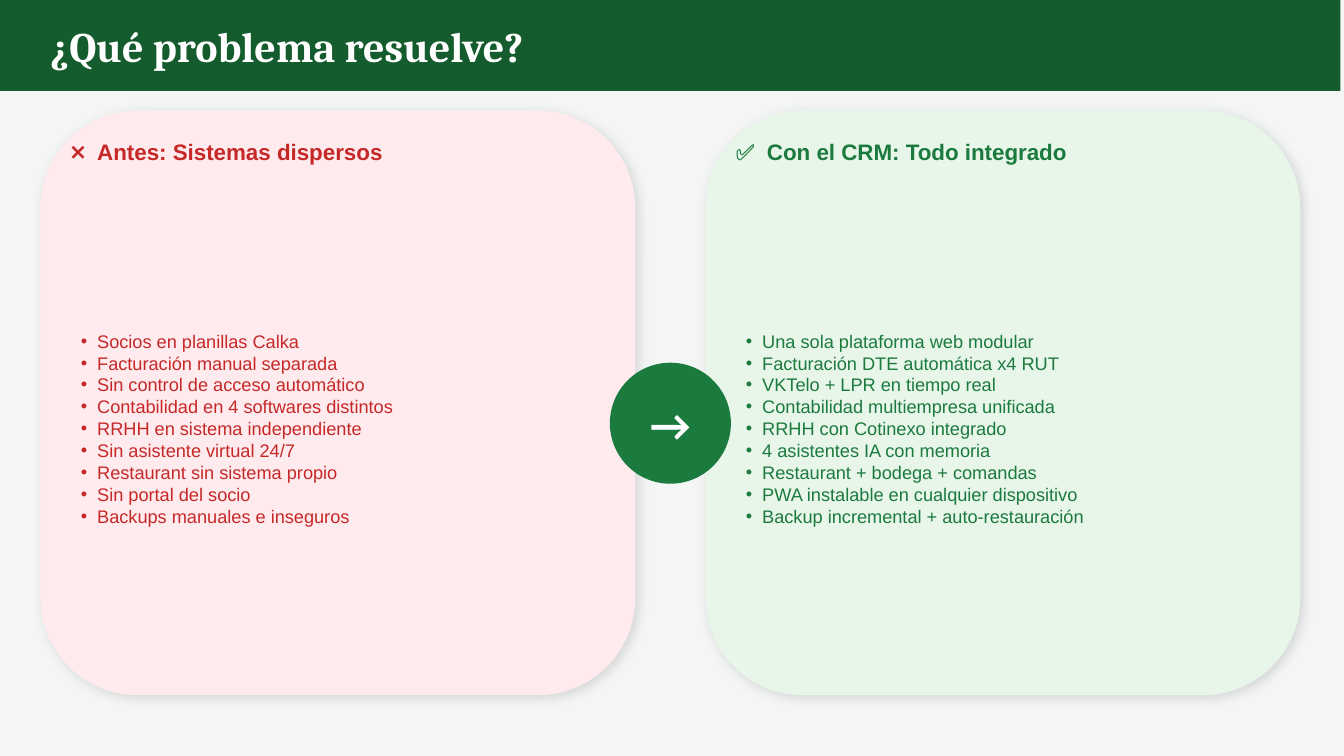
from lxml.etree import SubElement
from pptx import Presentation
from pptx.dml.color import RGBColor
from pptx.enum.shapes import MSO_SHAPE
from pptx.enum.text import MSO_ANCHOR, PP_ALIGN
from pptx.oxml import parse_xml
from pptx.oxml.ns import nsdecls, qn
from pptx.util import Cm, Pt

SHADOW = (
    f'<a:effectLst {nsdecls("a")}>'
    f'<a:outerShdw blurRad="{Pt(8)}" dist="{Pt(3)}" dir="2700000" algn="bl" rotWithShape="0">'
    '<a:srgbClr val="000000"><a:alpha val="13000"/></a:srgbClr>'
    '</a:outerShdw></a:effectLst>'
)


def add_block(page, preset, place, color, shadow=False):
    """Add a borderless filled shape; place is left, top, width, height in cm."""
    block = page.shapes.add_shape(preset, *map(Cm, place))
    block.fill.solid()
    block.fill.fore_color.rgb = RGBColor.from_string(color)
    block.line.fill.background()
    block.shadow.inherit = False
    if shadow:
        properties = block.element.spPr
        properties.replace(properties.find(qn("a:effectLst")), parse_xml(SHADOW))


def add_text(page, text, place, color, size, font="Arial", bold=False,
             align=PP_ALIGN.LEFT, margin=0, hanging=0, bullet=None):
    """Add a text box with one paragraph per line; margin and hanging in cm."""
    frame = page.shapes.add_textbox(*map(Cm, place)).text_frame
    frame.word_wrap = True
    frame.vertical_anchor = MSO_ANCHOR.MIDDLE
    for index, line in enumerate(text.split("\n")):
        para = frame.add_paragraph() if index else frame.paragraphs[0]
        para.alignment = align
        if margin:
            layout = para._p.get_or_add_pPr()
            layout.set("marL", str(Cm(margin)))
            layout.set("indent", str(-Cm(hanging)))
            if bullet:
                SubElement(layout, qn("a:buFont")).set("typeface", font)
                SubElement(layout, qn("a:buChar")).set("char", bullet)
        span = para.add_run()
        span.text = line
        span.font.name = font
        span.font.size = Pt(size)
        span.font.bold = bold
        span.font.color.rgb = RGBColor.from_string(color)


# Page
deck = Presentation()
deck.slide_width, deck.slide_height = Cm(33.87), Cm(19.05)
page = deck.slides.add_slide(deck.slide_layouts[6])
page.background.fill.solid()
page.background.fill.fore_color.rgb = RGBColor.from_string("F4F6F5")

# Title band
add_block(page, MSO_SHAPE.RECTANGLE, (0, 0, 33.78, 2.29), "145C2E")
add_text(page, "¿Qué problema resuelve?", (1.02, 0, 31.75, 2.29), "FFFFFF", 30,
         font="Cambria", bold=True)

# Comparison cards: left, fill, text colour, heading, heading hang, items
cards = [
    (1.02, "FFEBEE", "C62828", "❌\tAntes: Sistemas dispersos", 0.67, [
        "Socios en planillas Calka",
        "Facturación manual separada",
        "Sin control de acceso automático",
        "Contabilidad en 4 softwares distintos",
        "RRHH en sistema independiente",
        "Sin asistente virtual 24/7",
        "Restaurant sin sistema propio",
        "Sin portal del socio",
        "Backups manuales e inseguros",
    ]),
    (17.78, "E8F5E9", "1B7A3E", "✅\tCon el CRM: Todo integrado", 0.79, [
        "Una sola plataforma web modular",
        "Facturación DTE automática x4 RUT",
        "VKTelo + LPR en tiempo real",
        "Contabilidad multiempresa unificada",
        "RRHH con Cotinexo integrado",
        "4 asistentes IA con memoria",
        "Restaurant + bodega + comandas",
        "PWA instalable en cualquier dispositivo",
        "Backup incremental + auto-restauración",
    ]),
]
for left, fill, color, heading, hang, items in cards:
    add_block(page, MSO_SHAPE.ROUNDED_RECTANGLE, (left, 2.79, 14.99, 14.73), fill, shadow=True)
    text_left = left + 0.51
    add_text(page, heading, (text_left, 3.05, 13.97, 1.52), color, 16, bold=True,
             margin=hang, hanging=hang)
    add_text(page, "\n".join(items), (text_left, 4.7, 13.97, 12.19), color, 13,
             margin=0.67, hanging=0.41, bullet="•")

# Arrow badge between the cards
badge = (15.37, 9.14, 3.05, 3.05)
add_block(page, MSO_SHAPE.OVAL, badge, "1B7A3E")
add_text(page, "→", badge, "FFFFFF", 32, font="Calibri", bold=True, align=PP_ALIGN.CENTER)

deck.save("out.pptx")
